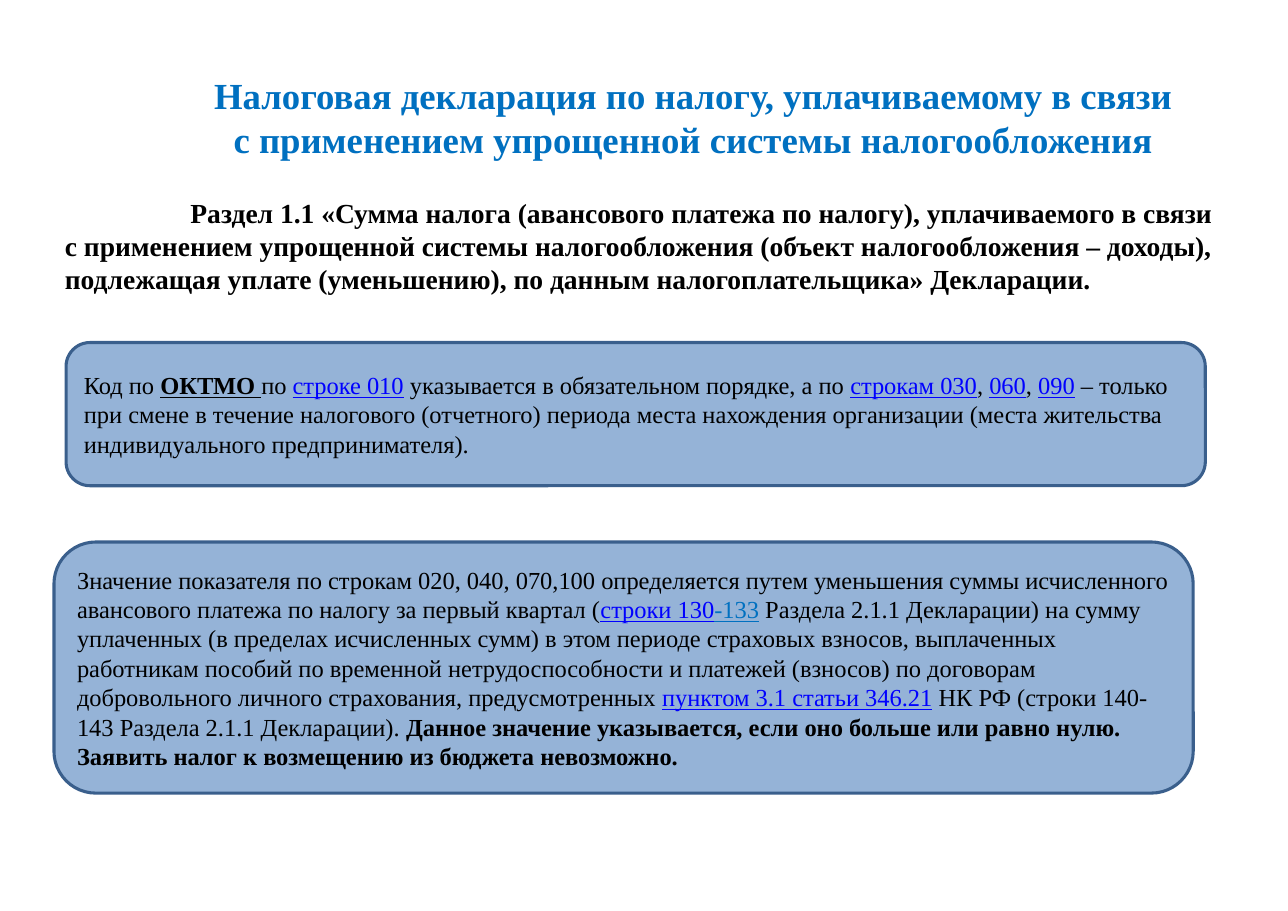
from lxml import etree
from pptx import Presentation
from pptx.dml.color import RGBColor
from pptx.enum.shapes import MSO_SHAPE
from pptx.enum.text import MSO_ANCHOR, MSO_AUTO_SIZE, PP_ALIGN
from pptx.oxml.ns import qn
from pptx.util import Inches, Pt

FONT = "Times New Roman"
BLACK = RGBColor(0x00, 0x00, 0x00)
TITLE_BLUE = RGBColor(0x00, 0x70, 0xC0)
LINK_BLUE = RGBColor(0x00, 0x00, 0xFF)
BOX_FILL = RGBColor(0x95, 0xB3, 0xD7)
BOX_LINE = RGBColor(0x3A, 0x5F, 0x8C)

PLAIN = {}
BOLD = {"bold": True}
LINK = {"color": LINK_BLUE, "underline": True}

TITLE = ("Налоговая декларация по налогу, уплачиваемому в связи "
         "с применением упрощенной системы налогообложения")
SECTION = ("\tРаздел 1.1 «Сумма налога (авансового платежа по налогу), уплачиваемого в связи "
           "с применением упрощенной системы налогообложения (объект налогообложения – доходы), "
           "подлежащая уплате (уменьшению), по данным налогоплательщика» Декларации.")
OKTMO_RULE = [
    ("Код по ", PLAIN),
    ("ОКТМО", {"bold": True, "underline": True}),
    (" ", {"underline": True}),
    ("по ", PLAIN),
    ("строке 010", LINK),
    (" указывается в обязательном порядке, а по ", PLAIN),
    ("строкам 030", LINK),
    (", ", PLAIN),
    ("060", LINK),
    (", ", PLAIN),
    ("090", LINK),
    (" – только при смене в течение налогового (отчетного) периода места нахождения "
     "организации (места жительства индивидуального предпринимателя).", PLAIN),
]
AMOUNT_RULE = [
    ("Значение показателя по строкам 020, 040, 070,100 определяется путем уменьшения суммы "
     "исчисленного авансового платежа по налогу за первый квартал (", PLAIN),
    ("строки 130", LINK),
    ("-133", {"color": TITLE_BLUE, "underline": True}),
    (" Раздела 2.1.1 Декларации) на сумму уплаченных (в пределах исчисленных сумм) в этом "
     "периоде страховых взносов, выплаченных работникам пособий по временной "
     "нетрудоспособности и платежей (взносов) по договорам добровольного личного "
     "страхования, предусмотренных ", PLAIN),
    ("пунктом 3.1 статьи 346.21", LINK),
    (" НК РФ (строки 140-143 Раздела 2.1.1 Декларации). ", PLAIN),
    ("Данное значение указывается, если оно больше или равно нулю. "
     "Заявить налог к возмещению из бюджета невозможно.", BOLD),
]
# left, top, width, height, runs
BOXES = [
    (0.6, 3.11, 10.34, 1.3, OKTMO_RULE),
    (0.49, 4.92, 10.34, 2.28, AMOUNT_RULE),
]


def add_runs(p, runs, size):
    for text, style in runs:
        r = p.add_run()
        r.text = text
        font = {"name": FONT, "size": Pt(size), "bold": False, **style}
        r.font.color.rgb = font.pop("color", BLACK)
        for name, value in font.items():
            setattr(r.font, name, value)


def add_title(s):
    sp = s.shapes.title
    sp.left, sp.top, sp.width, sp.height = map(Inches, (1.75, 0.59, 9.08, 0.94))
    tf = sp.text_frame
    frame = {"word_wrap": True, "auto_size": MSO_AUTO_SIZE.NONE,
             "vertical_anchor": MSO_ANCHOR.MIDDLE,
             "margin_left": Inches(0.11), "margin_right": Inches(0.11),
             "margin_top": Inches(0.06), "margin_bottom": Inches(0.06)}
    for name, value in frame.items():
        setattr(tf, name, value)
    p = tf.paragraphs[0]
    p.alignment = PP_ALIGN.CENTER
    add_runs(p, [(TITLE, {"bold": True, "color": TITLE_BLUE})], 24)


def add_section(s):
    sp = s.shapes.add_textbox(*map(Inches, (0.49, 1.73, 10.65, 1.01)))
    tf = sp.text_frame
    tf.word_wrap = True
    p = tf.paragraphs[0]
    tabs = etree.SubElement(p._p.get_or_add_pPr(), qn("a:tabLst"))
    etree.SubElement(tabs, qn("a:tab"), pos=str(Inches(1.14)), algn="l")
    add_runs(p, [(SECTION, BOLD)], 18)


def add_box(s, left, top, width, height, runs):
    sp = s.shapes.add_shape(MSO_SHAPE.ROUNDED_RECTANGLE,
                            *map(Inches, (left, top, width, height)))
    sp.shadow.inherit = False
    sp.fill.solid()
    sp.fill.fore_color.rgb = BOX_FILL
    sp.line.color.rgb = BOX_LINE
    sp.line.width = Pt(2)
    tf = sp.text_frame
    tf.word_wrap = True
    tf.vertical_anchor = MSO_ANCHOR.MIDDLE
    p = tf.paragraphs[0]
    p.alignment = PP_ALIGN.LEFT
    add_runs(p, runs, 16)


def main():
    prs = Presentation()
    prs.slide_width, prs.slide_height = Inches(11.69), Inches(8.27)
    s = prs.slides.add_slide(prs.slide_layouts[5])
    add_title(s)
    add_section(s)
    for box in BOXES:
        add_box(s, *box)
    prs.save("out.pptx")


if __name__ == "__main__":
    main()
